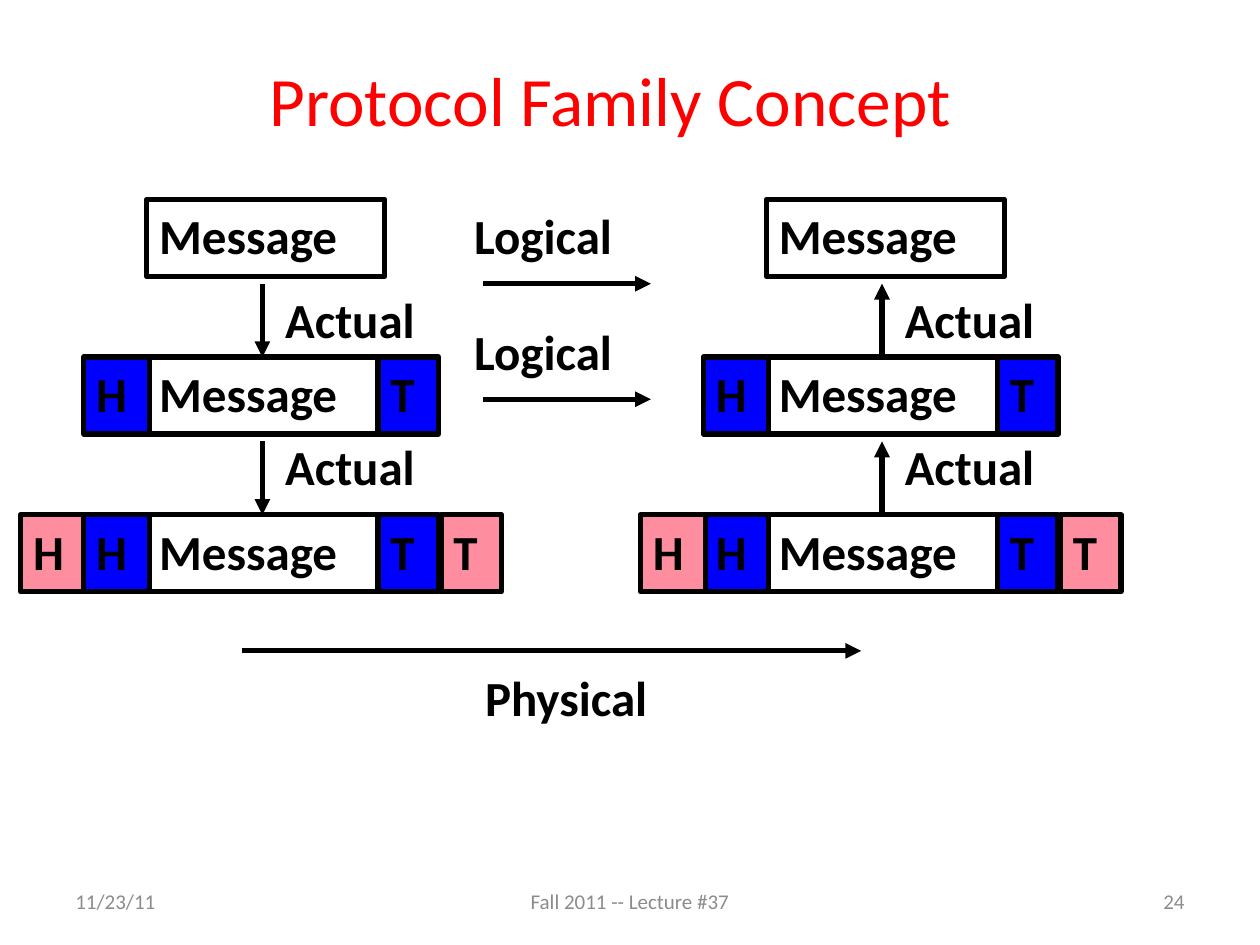
import dataclasses
import lxml.etree
import pptx
import pptx.dml.color
import pptx.enum.shapes
import pptx.enum.text
import pptx.oxml.ns
import pptx.util

Cm = pptx.util.Cm
Pt = pptx.util.Pt
Align = pptx.enum.text.PP_ALIGN
Anchor = pptx.enum.text.MSO_ANCHOR

HUES = {"ink": "000000", "title": "FF0000", "inner": "0000FF",
        "outer": "FF8DA0", "foot": "8C8C8C"}
FONT = "Calibri"
TOP, STEP = 4.02, 3.18      # first row of boxes, distance between rows
SHIFT = 12.49               # sender to receiver
TALL = 1.55                 # box height


@dataclasses.dataclass
class Part:
    text: str
    left: float
    width: float
    fill: str = ""


@dataclasses.dataclass
class Label:
    text: str
    left: float
    top: float
    width: float
    height: float = 1.45
    size: float = 28
    hue: str = "ink"
    bold: bool = True
    align: Align = Align.LEFT
    anchor: Anchor = Anchor.TOP


def color(name: str) -> pptx.dml.color.RGBColor:
    return pptx.dml.color.RGBColor.from_string(HUES[name])


def write(shape, label: Label) -> None:
    frame = shape.text_frame
    frame.word_wrap = True
    frame.vertical_anchor = label.anchor
    para = frame.paragraphs[0]
    para.alignment = label.align
    run = para.add_run()
    run.text = label.text
    run.font.name = FONT
    run.font.size = Pt(label.size)
    run.font.bold = label.bold
    run.font.color.rgb = color(label.hue)


def add_label(slide, label: Label) -> None:
    box = slide.shapes.add_textbox(Cm(label.left), Cm(label.top),
                                   Cm(label.width), Cm(label.height))
    write(box, label)


def add_part(slide, part: Part, dx: float, top: float) -> None:
    box = slide.shapes.add_shape(
        pptx.enum.shapes.MSO_SHAPE.RECTANGLE,
        Cm(part.left + dx), Cm(top), Cm(part.width), Cm(TALL))
    box.shadow.inherit = False
    if part.fill:
        box.fill.solid()
        box.fill.fore_color.rgb = color(part.fill)
    else:
        box.fill.background()
    box.line.color.rgb = color("ink")
    box.line.width = Pt(3)
    write(box, Label(part.text, part.left, top, part.width))


def add_arrow(slide, x1: float, y1: float, x2: float, y2: float) -> None:
    line = slide.shapes.add_connector(
        pptx.enum.shapes.MSO_CONNECTOR.STRAIGHT,
        Cm(x1), Cm(y1), Cm(x2), Cm(y2))
    line.line.color.rgb = color("ink")
    line.line.width = Pt(3)
    qn = pptx.oxml.ns.qn
    tip = lxml.etree.SubElement(line.line._get_or_add_ln(), qn("a:tailEnd"))
    tip.set("type", "triangle")
    lxml.etree.SubElement(line._element.spPr, qn("a:effectLst"))


# Layers of the packet: each row wraps the one above
CORE = [Part("Message", 2.96, 4.8)]
INNER = [Part("T", 7.62, 1.22, "inner"), Part("H", 1.69, 1.32, "inner")]
OUTER = [Part("T", 8.89, 1.22, "outer"), Part("H", 0.42, 1.32, "outer")]


def add_stack(slide, dx: float, sends: bool) -> None:
    full = OUTER + CORE + INNER if sends else CORE + INNER + OUTER
    for row, parts in enumerate([CORE, CORE + INNER, full]):
        for part in parts:
            add_part(slide, part, dx, TOP + row * STEP)
    # Arrows between the rows: down when sending, up when receiving
    for row, top in enumerate([5.72, 8.68]):
        ends = [5.72 + row * STEP, TOP + (row + 1) * STEP]
        start, stop = ends if sends else reversed(ends)
        add_arrow(slide, 5.29 + dx, start, 5.29 + dx, stop)
        add_label(slide, Label("Actual", 5.5 + dx, top, 3.53))


def main() -> None:
    deck = pptx.Presentation()
    deck.slide_width, deck.slide_height = Cm(25.4), Cm(19.05)
    slide = deck.slides.add_slide(deck.slide_layouts[6])

    # Title
    add_label(slide, Label("Protocol Family Concept", 2.12, 1.34, 20.36, 1.32,
                           39.6, "title", False, Align.CENTER, Anchor.MIDDLE))

    # Sender and receiver
    add_stack(slide, 0, True)
    add_stack(slide, SHIFT, False)

    # Logical links
    for top in (TOP, 6.35):
        add_label(slide, Label("Logical", 9.31, top, 3.96))
        add_arrow(slide, 9.74, top + 1.7, 13.12, top + 1.7)

    # Physical link
    add_arrow(slide, 4.87, 13.12, 4.87 + SHIFT, 13.12)
    add_label(slide, Label("Physical", 9.53, 13.34, 4.52))

    # Footer
    for text, left, width, align in [
            ("11/23/11", 1.27, 5.93, Align.LEFT),
            ("Fall 2011 -- Lecture #37", 8.68, 8.04, Align.CENTER),
            ("24", 18.2, 5.93, Align.RIGHT)]:
        add_label(slide, Label(text, left, 17.65, width, 1.02, 12, "foot",
                               False, align, Anchor.MIDDLE))

    deck.save("out.pptx")


if __name__ == "__main__":
    main()
